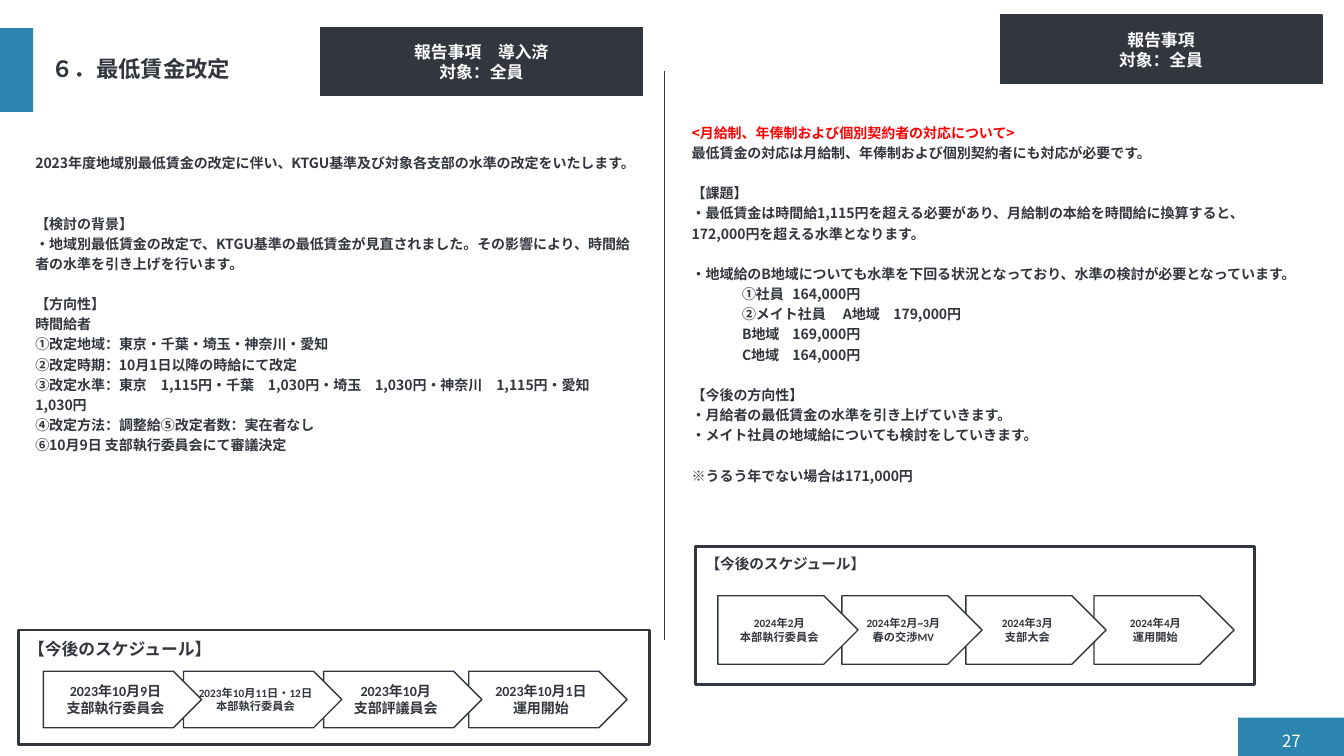
import pptx
import pptx.util
import pptx.dml.color
import pptx.enum.shapes
import pptx.enum.text
import pptx.oxml.ns
import lxml.etree

PX = 9144  # EMU in one px, 100 px to the inch
THEME = {
    "ink": "32363F", "accent": "2C85AE", "paper": "FFFFFF", "alert": "FF0000",
    "body_font": "Noto Sans CJK JP", "box_font": "Calibri", "label_font": "Roboto",
    "title": 16, "placard": 12, "number": 12, "body": 10, "body_line": 14.4,
}
SHAPE = pptx.enum.shapes.MSO_SHAPE
ALIGN = pptx.enum.text.PP_ALIGN
ANCHOR = pptx.enum.text.MSO_ANCHOR
qn = pptx.oxml.ns.qn


def write(paragraph, text, size, face, color, bold=True, **layout):
    """Put one formatted run into a paragraph."""
    run = paragraph.add_run()
    run.text = text
    for name, value in {"size": pptx.util.Pt(size), "bold": bold, "name": face}.items():
        setattr(run.font, name, value)
    run.font.color.rgb = pptx.dml.color.RGBColor.from_string(THEME[color])
    lxml.etree.SubElement(run.font._element, qn("a:ea"), typeface=face)
    for name, value in layout.items():
        setattr(paragraph, name, value)


def add_box(shapes, kind, place, fill=None, line=None, width=1):
    """Add a preset shape with flat fill and outline."""
    box = shapes.add_shape(kind, *[v * PX for v in place])
    box.shadow.inherit = False
    for part, color in ((box.fill, fill), (box.line.fill, line)):
        if color:
            part.solid()
            part.fore_color.rgb = pptx.dml.color.RGBColor.from_string(THEME[color])
        else:
            part.background()
    if line:
        box.line.width = pptx.util.Pt(width)
    box.text_frame.word_wrap = True
    return box


deck = pptx.Presentation()
deck.slide_width, deck.slide_height = 1333 * PX, 750 * PX
slide = deck.slides.add_slide(deck.slide_layouts[3])
title, background_body, salary_body = slide.placeholders

# Accent blocks and page number
for place in ((1228, 712, 105, 38), (0, 28, 33, 83)):
    add_box(slide.shapes, SHAPE.RECTANGLE, place, "accent")
page_number = slide.shapes.add_textbox(*[v * PX for v in (1224, 720, 76, 30)]).text_frame
page_number.word_wrap = True
page_number.vertical_anchor = ANCHOR.MIDDLE
write(page_number.paragraphs[0], "27", THEME["number"], THEME["body_font"], "paper",
      bold=False, alignment=ALIGN.RIGHT)

# Title
for name, value in zip(("left", "top", "width", "height"), (41, 28, 1260, 83)):
    setattr(title, name, value * PX)
title.text_frame.vertical_anchor = ANCHOR.MIDDLE
title.text_frame.auto_size = pptx.enum.text.MSO_AUTO_SIZE.NONE
write(title.text_frame.paragraphs[0], "６．最低賃金改定", THEME["title"],
      THEME["body_font"], "ink", alignment=ALIGN.LEFT, line_spacing=0.9)

# Body columns: (lines of space before, text, tab stops)
background_lines = [
    (0, "2023年度地域別最低賃金の改定に伴い、KTGU基準及び対象各支部の水準の改定をいたします。", ()),
    (2, "【検討の背景】", ()),
    (0, "・地域別最低賃金の改定で、KTGU基準の最低賃金が見直されました。その影響により、時間給者の水準を引き上げを行います。", ()),
    (1, "【方向性】", ()),
    (0, "時間給者", ()),
    (0, "①改定地域：東京・千葉・埼玉・神奈川・愛知", ()),
    (0, "②改定時期：10月1日以降の時給にて改定", ()),
    (0, "③改定水準：東京　1,115円・千葉　1,030円・埼玉　1,030円・神奈川　1,115円・愛知　1,030円", ()),
    (0, "④改定方法：調整給⑤改定者数：実在者なし", ()),
    (0, "⑥10月9日 支部執行委員会にて審議決定", ()),
]
salary_lines = [
    (0, "<月給制、年俸制および個別契約者の対応について>", ()),
    (0, "最低賃金の対応は月給制、年俸制および個別契約者にも対応が必要です。", ()),
    (1, "【課題】", ()),
    (0, "・最低賃金は時間給1,115円を超える必要があり、月給制の本給を時間給に換算すると、172,000円を超える水準となります。", ()),
    (1, "・地域給のB地域についても水準を下回る状況となっており、水準の検討が必要となっています。", ()),
    (0, "\t➀社員\t164,000円", (28, 211)),
    (0, "\t➁メイト社員\tA地域\t179,000円", (28, 128, 186)),
    (0, "\tB地域\t169,000円", (156, 213)),
    (0, "\tC地域\t164,000円", (156, 213)),
    (1, "【今後の方向性】", ()),
    (0, "・月給者の最低賃金の水準を引き上げていきます。", ()),
    (0, "・メイト社員の地域給についても検討をしていきます。", ()),
    (1, "※うるう年でない場合は171,000円", ()),
]
for body, place, margin_top, lines in (
    (background_body, (25, 125, 612, 554), 25, background_lines),
    (salary_body, (676, 115, 612, 425), 5, salary_lines),
):
    for name, value in zip(("left", "top", "width", "height"), place):
        setattr(body, name, value * PX)
    frame = body.text_frame
    frame.auto_size = pptx.enum.text.MSO_AUTO_SIZE.NONE
    frame.margin_top = margin_top * PX
    for index, (gap, text, stops) in enumerate(lines):
        paragraph = frame.add_paragraph() if index else frame.paragraphs[0]
        write(paragraph, text, THEME["body"], THEME["body_font"],
              "alert" if text.startswith("<") else "ink",
              line_spacing=pptx.util.Pt(THEME["body_line"]),
              space_before=pptx.util.Pt(gap * THEME["body_line"]))
        properties = paragraph._p.get_or_add_pPr()
        properties.set("marL", "0")
        properties.set("indent", "0")
        lxml.etree.SubElement(properties, qn("a:buNone"))
        if stops:
            tabs = lxml.etree.SubElement(properties, qn("a:tabLst"))
            for stop in stops:
                lxml.etree.SubElement(tabs, qn("a:tab"), pos=str(stop * PX), algn="l")

# Placards above the columns
for left, top, heading in ((992, 15, "報告事項"), (318, 27, "報告事項　導入済")):
    placard = add_box(slide.shapes, SHAPE.RECTANGLE, (left, top, 319, 68), "ink", "ink").text_frame
    placard.vertical_anchor = ANCHOR.MIDDLE
    write(placard.paragraphs[0], heading, THEME["placard"], THEME["box_font"], "paper",
          alignment=ALIGN.CENTER)
    write(placard.add_paragraph(), "対象：全員", THEME["placard"], THEME["box_font"], "paper",
          alignment=ALIGN.CENTER)

# Divider between the columns
divider = slide.shapes.add_connector(pptx.enum.shapes.MSO_CONNECTOR.STRAIGHT,
                                     659 * PX, 70 * PX, 659 * PX, 635 * PX)
divider.line.width = pptx.util.Pt(0.5)
divider.line.color.rgb = pptx.dml.color.RGBColor.from_string(THEME["ink"])
lxml.etree.SubElement(divider._element.spPr, qn("a:effectLst"))

# Schedules: frame, label size, step (top, width, height), steps (left, size, date, event)
schedules = [
    ((18, 625, 626, 114), 12, (666, 157, 56), [
        (43, 10, "2023年10月9日", "支部執行委員会"),
        (182, 8, "2023年10月11日・12日", "本部執行委員会"),
        (321, 10, "2023年10月", "支部評議員会"),
        (465, 10, "2023年10月1日", "運用開始")]),
    ((690, 542, 554, 137), 10.5, (591, 139, 68), [
        (712, 8, "2024年2月", "本部執行委員会"),
        (835, 8, "2024年2月~3月", "春の交渉MV"),
        (958, 8, "2024年3月", "支部大会"),
        (1085, 8, "2024年4月", "運用開始")]),
]
for place, label_size, (top, width, height), steps in schedules:
    schedule = slide.shapes.add_group_shape()
    label = add_box(schedule.shapes, SHAPE.RECTANGLE, place, line="ink", width=2).text_frame
    label.vertical_anchor = ANCHOR.TOP
    write(label.paragraphs[0], "【今後のスケジュール】", label_size, THEME["label_font"], "ink",
          alignment=ALIGN.LEFT, line_spacing=1.2)
    # Each earlier step overlaps the next one
    for left, size, date, event in reversed(steps):
        step = add_box(schedule.shapes, SHAPE.PENTAGON, (left, top, width, height),
                       "paper", "ink").text_frame
        step.vertical_anchor = ANCHOR.MIDDLE
        write(step.paragraphs[0], date, size, THEME["box_font"], "ink", alignment=ALIGN.CENTER)
        write(step.add_paragraph(), event, size, THEME["box_font"], "ink", alignment=ALIGN.CENTER)

deck.save("out.pptx")
